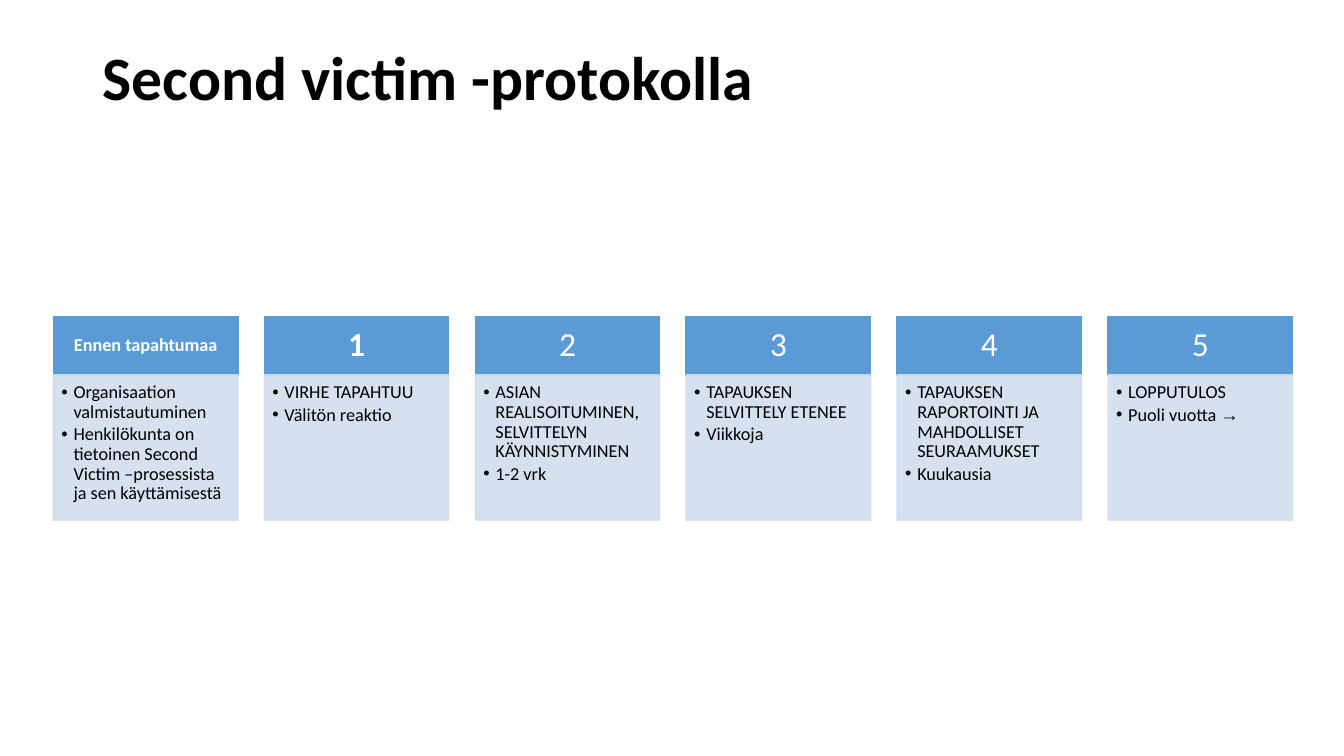
from lxml.etree import SubElement
from pptx import Presentation
from pptx.dml.color import RGBColor
from pptx.enum.shapes import MSO_SHAPE
from pptx.enum.text import MSO_ANCHOR, PP_ALIGN
from pptx.oxml.ns import qn
from pptx.util import Inches, Pt

COLORS = {"header": "5B9BD5", "body": "D2DEEF", "text": "000000", "light": "FFFFFF"}

PHASES = [
    ("Ennen tapahtumaa", 13, True, [
        "Organisaation valmistautuminen",
        "Henkilökunta on tietoinen Second Victim –prosessista ja sen käyttämisestä"]),
    ("1", 24, True, ["VIRHE TAPAHTUU", "Välitön reaktio"]),
    ("2", 24, False, ["ASIAN REALISOITUMINEN, SELVITTELYN KÄYNNISTYMINEN", "1-2 vrk"]),
    ("3", 24, False, ["TAPAUKSEN SELVITTELY ETENEE", "Viikkoja"]),
    ("4", 24, False, ["TAPAUKSEN RAPORTOINTI JA MAHDOLLISET SEURAAMUKSET", "Kuukausia"]),
    ("5", 24, False, ["LOPPUTULOS", "Puoli vuotta →"]),
]
FIRST_LEFT, LAST_LEFT, COLUMN_WIDTH = 0.53, 10.99, 1.83
HEADER_TOP, HEADER_HEIGHT, BODY_HEIGHT = 3.14, 0.58, 1.44


class ProtocolSlide:
    """Draws the title and phase columns of the protocol in one style."""

    def __init__(self, page, font="Calibri"):
        self.page = page
        self.font = font

    def style(self, span, size, color, bold=False):
        span.font.name = self.font
        span.font.size = Pt(size)
        span.font.bold = bold
        span.font.color.rgb = RGBColor.from_string(COLORS[color])

    def frame(self, shape, anchor, insets):
        frame = shape.text_frame
        frame.word_wrap = True
        frame.vertical_anchor = anchor
        (frame.margin_left, frame.margin_top,
         frame.margin_right, frame.margin_bottom) = map(Inches, insets)
        return frame

    def title(self, text):
        box = self.page.shapes.add_textbox(Inches(0.92), Inches(0.4), Inches(11.5), Inches(0.8))
        frame = self.frame(box, MSO_ANCHOR.MIDDLE, (0.1, 0.05, 0.1, 0.05))
        frame.text = text
        paragraph = frame.paragraphs[0]
        paragraph.line_spacing = 0.9
        self.style(paragraph.runs[0], 44, "text", True)

    def panel(self, left, top, height, color, opacity=100):
        shape = self.page.shapes.add_shape(
            MSO_SHAPE.RECTANGLE, Inches(left), Inches(top), Inches(COLUMN_WIDTH), Inches(height))
        shape.shadow.inherit = False
        shape.line.width = Pt(1)
        for fill in (shape.fill, shape.line.fill):
            fill.solid()
            fill.fore_color.rgb = RGBColor.from_string(COLORS[color])
        if opacity < 100:
            for tint in shape._element.spPr.iter(qn("a:srgbClr")):
                SubElement(tint, qn("a:alpha"), val=str(opacity * 1000))
        return shape

    def header(self, left, label, size, bold):
        shape = self.panel(left, HEADER_TOP, HEADER_HEIGHT, "header")
        insets = (0.1, 0.06, 0.1, 0.06) if size < 20 else (0.19, 0.11, 0.19, 0.11)
        frame = self.frame(shape, MSO_ANCHOR.MIDDLE, insets)
        frame.text = label
        paragraph = frame.paragraphs[0]
        paragraph.alignment = PP_ALIGN.CENTER
        paragraph.line_spacing = 0.9
        self.style(paragraph.runs[0], size, "light", bold)

    def bullets(self, left, items):
        shape = self.panel(left, HEADER_TOP + HEADER_HEIGHT, BODY_HEIGHT, "body", 90)
        frame = self.frame(shape, MSO_ANCHOR.TOP, (0.08, 0.08, 0.1, 0.11))
        frame.text = "\n".join(items)
        for paragraph, item in zip(frame.paragraphs, items):
            paragraph.alignment = PP_ALIGN.LEFT
            paragraph.line_spacing = 0.9
            paragraph.space_after = Pt(2)
            properties = paragraph._p.get_or_add_pPr()
            properties.set("marL", str(Inches(0.12)))
            properties.set("indent", str(-Inches(0.12)))
            SubElement(properties, qn("a:buFont"), typeface="Arial")
            SubElement(properties, qn("a:buChar"), char="•")
            words, arrow, _ = item.partition("→")
            span = paragraph.runs[0]
            span.text = words
            self.style(span, 13, "text")
            if arrow:
                span = paragraph.add_run()
                span.text = arrow
                self.style(span, 13, "text")
                span.font.name = "Times New Roman"


def main():
    deck = Presentation()
    deck.slide_width, deck.slide_height = Inches(13.33), Inches(7.5)
    slide = ProtocolSlide(deck.slides.add_slide(deck.slide_layouts[6]))
    slide.title("Second victim -protokolla")
    pitch = (LAST_LEFT - FIRST_LEFT) / (len(PHASES) - 1)
    for index, (label, size, bold, items) in enumerate(PHASES):
        left = FIRST_LEFT + index * pitch
        slide.header(left, label, size, bold)
        slide.bullets(left, items)
    deck.save("out.pptx")


if __name__ == "__main__":
    main()
